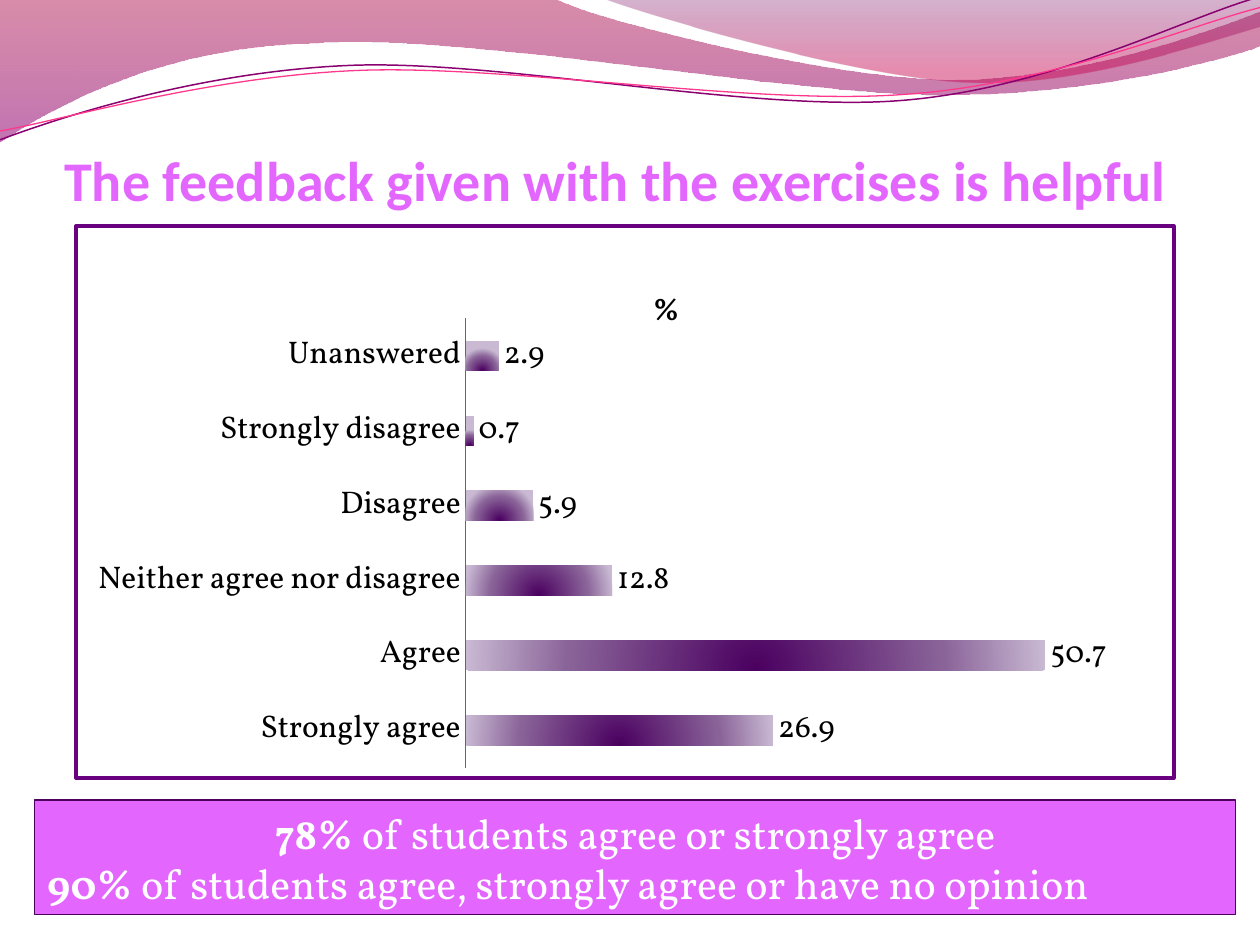
from dataclasses import dataclass

from lxml import etree
from pptx import Presentation
from pptx import util as u
from pptx.chart.data import CategoryChartData
from pptx.dml.color import RGBColor
from pptx.enum import chart as charts
from pptx.enum import shapes, text
from pptx.oxml import parse_xml
from pptx.oxml.ns import nsdecls, qn

COLUMNS, ROWS = 100, 75


@dataclass(frozen=True)
class Theme:
    heading_font: str = "Calibri"
    body_font: str = "Vollkorn"
    heading_size: float = 32
    summary_size: float = 24
    chart_size: float = 18
    accent: str = "E366FF"
    ink: str = "000000"
    paper: str = "FFFFFF"
    frame: str = "68007F"
    edge: str = "4D005E"
    axis: str = "666666"
    bar_stops: tuple = ((0, "4A0060"), (65, "8A6499"), (100, "C9B9D3"))
    # each wave stop: position in percent, colour, opacity in percent
    wide_wave: tuple = ((0, "A90042", 45), (100, "8E0073", 55))
    right_wave: tuple = ((0, "73005E", 30), (80, "C9004F", 45))
    dark_line: str = "8A0070"
    pink_line: str = "FF388C"


def rgb(value):
    return RGBColor.from_string(value)


def add_text(para, words, *, font, size, color, bold=False):
    span = para.add_run()
    span.text = words
    style_font(span.font, font=font, size=size, color=color, bold=bold)


def style_font(target, *, font, size, color, bold=False):
    target.name, target.size, target.bold = font, u.Pt(size), bold
    target.color.rgb = rgb(color)


def bend(shape, segments):
    """Join the straight steps of each six-number segment into one cubic curve."""
    steps = iter(list(shape._element.iter(qn("a:lnTo"))))
    for segment in segments:
        first = next(steps)
        if len(segment) == 6:
            curve = etree.Element(qn("a:cubicBezTo"))
            first.addprevious(curve)
            for step in (first, next(steps), next(steps)):
                curve.append(step[0])
                step.getparent().remove(step)


def place_in_chart(parent, index, inner=False, **shares):
    """Give a chart part a fixed place, as shares of the chart's size."""
    old = parent.find(qn("c:layout"))
    if old is not None:
        parent.remove(old)
    target = '<c:layoutTarget val="inner"/>' if inner else ""
    modes = "".join(f'<c:{axis}Mode val="edge"/>' for axis in "xy")
    sizes = "".join(f'<c:{key} val="{share}"/>' for key, share in shares.items())
    parent.insert(index, parse_xml(
        f'<c:layout {nsdecls("c")}><c:manualLayout>{target}{modes}{sizes}'
        '</c:manualLayout></c:layout>'))


class SlideBuilder:
    def __init__(self, deck, theme):
        self.deck, self.theme = deck, theme
        self.slide = deck.slides.add_slide(deck.slide_layouts[5])
        self.slide.background.fill.solid()
        self.slide.background.fill.fore_color.rgb = rgb(theme.paper)

    def area(self, column, row, columns, rows):
        across, down = self.deck.slide_width / COLUMNS, self.deck.slide_height / ROWS
        return (u.Emu(round(column * across)), u.Emu(round(row * down)),
                u.Emu(round(columns * across)), u.Emu(round(rows * down)))

    def wave(self, start, *segments, stops=None, line=None, width=0.75):
        """Draw cubic curves (six numbers) and straight lines (two numbers)."""
        points = [self.area(*segment[i:i + 2], 0, 0)[:2]
                  for segment in (start, *segments) for i in range(0, len(segment), 2)]
        builder = self.slide.shapes.build_freeform(*points[0], scale=1.0)
        builder.add_line_segments(points[1:], close=bool(stops))
        shape = builder.convert_to_shape()
        bend(shape, segments)
        shape.shadow.inherit = False
        if not stops:
            shape.fill.background()
            shape.line.color.rgb, shape.line.width = rgb(line), u.Pt(width)
            return
        shape.line.fill.background()
        shape.fill.gradient()
        shape.fill.gradient_angle = 270
        for stop, (position, color, _) in zip(shape.fill.gradient_stops, stops):
            stop.position, stop.color.rgb = position / 100, rgb(color)
        colors = shape._element.spPr.iter(qn("a:srgbClr"))
        for node, (_, _, opacity) in zip(colors, stops):
            etree.SubElement(node, qn("a:alpha"), val=str(opacity * 1000))

    def title(self, words, *place):
        box = self.slide.shapes.title
        box.left, box.top, box.width, box.height = self.area(*place)
        frame = box.text_frame
        frame.margin_left = frame.margin_right = frame.margin_bottom = 0
        frame.margin_top = u.Inches(0.05)
        frame.vertical_anchor = text.MSO_ANCHOR.BOTTOM
        frame.auto_size = text.MSO_AUTO_SIZE.NONE
        frame.paragraphs[0].alignment = text.PP_ALIGN.LEFT
        add_text(frame.paragraphs[0], words, font=self.theme.heading_font,
                 size=self.theme.heading_size, color=self.theme.accent, bold=True)

    def bar_chart(self, heading, answers, *place):
        theme = self.theme
        style = dict(font=theme.body_font, size=theme.chart_size, color=theme.ink)
        data = CategoryChartData(number_format="0.0")
        data.categories = list(answers)
        data.add_series("Series 1", list(answers.values()))
        chart = self.slide.shapes.add_chart(
            charts.XL_CHART_TYPE.BAR_CLUSTERED, *self.area(*place), data).chart
        style_font(chart.font, **style)
        chart.has_legend = False

        add_text(chart.chart_title.text_frame.paragraphs[0], heading, **style | {"bold": True})
        place_in_chart(chart.chart_title._element, 1, x=0.52, y=0.1)
        root = chart.element.find(qn("c:chart"))
        place_in_chart(root.find(qn("c:plotArea")), 0, inner=True,
                       x=0.355, y=0.167, w=0.625, h=0.814)

        values, names = chart.value_axis, chart.category_axis
        values.minimum_scale, values.maximum_scale = 0, 60
        values.has_major_gridlines = values.visible = False
        names.major_tick_mark = charts.XL_TICK_MARK.NONE
        names.format.line.color.rgb = rgb(theme.axis)
        names.format.line.width = u.Pt(0.75)
        style_font(names.tick_labels.font, **style)

        plot = chart.plots[0]
        plot.gap_width, plot.vary_by_categories, plot.has_data_labels = 150, False, True
        labels = plot.data_labels
        labels.show_value = True
        labels.number_format, labels.number_format_is_linked = "0.0", False
        labels.position = charts.XL_LABEL_POSITION.OUTSIDE_END
        style_font(labels.font, **style)

        stops = "".join(f'<a:gs pos="{position * 1000}"><a:srgbClr val="{color}"/></a:gs>'
                        for position, color in theme.bar_stops)
        series = plot.series[0]
        series.invert_if_negative = False
        series.format.line.fill.background()
        series._element.spPr.insert(0, parse_xml(
            f'<a:gradFill {nsdecls("a")} rotWithShape="1"><a:gsLst>{stops}</a:gsLst>'
            '<a:path path="circle"><a:fillToRect l="50000" t="100000" r="50000"/></a:path>'
            '</a:gradFill>'))
        root.addnext(parse_xml(
            f'<c:spPr {nsdecls("c", "a")}><a:solidFill><a:srgbClr val="{theme.paper}"/></a:solidFill>'
            f'<a:ln w="{u.Pt(2)}"><a:solidFill><a:srgbClr val="{theme.frame}"/></a:solidFill></a:ln>'
            '</c:spPr>'))

    def summary(self, lines, *place):
        """Each line is an alignment, a bold lead and the words after it."""
        theme = self.theme
        box = self.slide.shapes.add_shape(shapes.MSO_SHAPE.RECTANGLE, *self.area(*place))
        box.fill.solid()
        box.fill.fore_color.rgb = rgb(theme.accent)
        box.line.color.rgb, box.line.width = rgb(theme.edge), u.Pt(0.75)
        box.shadow.inherit = False
        frame = box.text_frame
        frame.word_wrap = True
        frame.vertical_anchor = text.MSO_ANCHOR.MIDDLE
        for index, (alignment, lead, rest) in enumerate(lines):
            para = frame.add_paragraph() if index else frame.paragraphs[0]
            para.alignment = alignment
            for words, bold in ((lead, True), (rest, False)):
                add_text(para, words, font=theme.body_font, size=theme.summary_size,
                         color=theme.paper, bold=bold)


def main():
    deck, theme = Presentation(), Theme()
    deck.slide_width, deck.slide_height = u.Inches(10), u.Inches(7.5)
    page = SlideBuilder(deck, theme)
    page.wave((0, 0), (44, -0.1), (47.6, 1.7, 66.4, 6.3, 75.8, 6.3),
              (85.3, 6.3, 95.8, 2.6, 100, 0.9), (100.1, 3.6),
              (98.3, 4.4, 87, 7.6, 74.6, 7.5), (62.2, 7.5, 38.2, 2.8, 25.7, 3.4),
              (12.9, 3.6, 4.6, 8.3, -0.1, 11.3), stops=theme.wide_wave)
    page.wave((47.9, -0.1), (50.9, 1.1, 68.2, 6.2, 76.9, 6.5),
              (85.6, 6.9, 96.1, 3.2, 100, 2.1), (100, 0), stops=theme.right_wave)
    page.wave((0, 11.1), (4.8, 9.3, 15.8, 5.7, 27.7, 5.2), (39.5, 4.7, 59.3, 8.9, 71.3, 8),
              (83.3, 7.1, 93.8, 1.5, 99.8, -0.2), line=theme.dark_line, width=0.85)
    page.wave((0, 10.4), (4.7, 9.6, 16.4, 6.1, 28.3, 5.6), (40.3, 5.1, 59.7, 8.4, 71.7, 7.5),
              (83.6, 6.7, 94.1, 2.1, 100, 0.6), line=theme.pink_line)
    page.title("The feedback given with the exercises is helpful", 5.1, 4.4, 90, 12.5)
    page.bar_chart("%", {"Strongly agree": 26.9, "Agree": 50.7,
                         "Neither agree nor disagree": 12.8, "Disagree": 5.9,
                         "Strongly disagree": 0.7, "Unanswered": 2.9}, 5.9, 17.8, 87.4, 44.1)
    page.summary([
        (text.PP_ALIGN.CENTER, "78% ", "of students agree or strongly agree"),
        (text.PP_ALIGN.LEFT, "90%", " of students agree, strongly agree or have no opinion"),
    ], 2.75, 63.5, 95.3, 9.1)
    deck.save("out.pptx")


if __name__ == "__main__":
    main()
